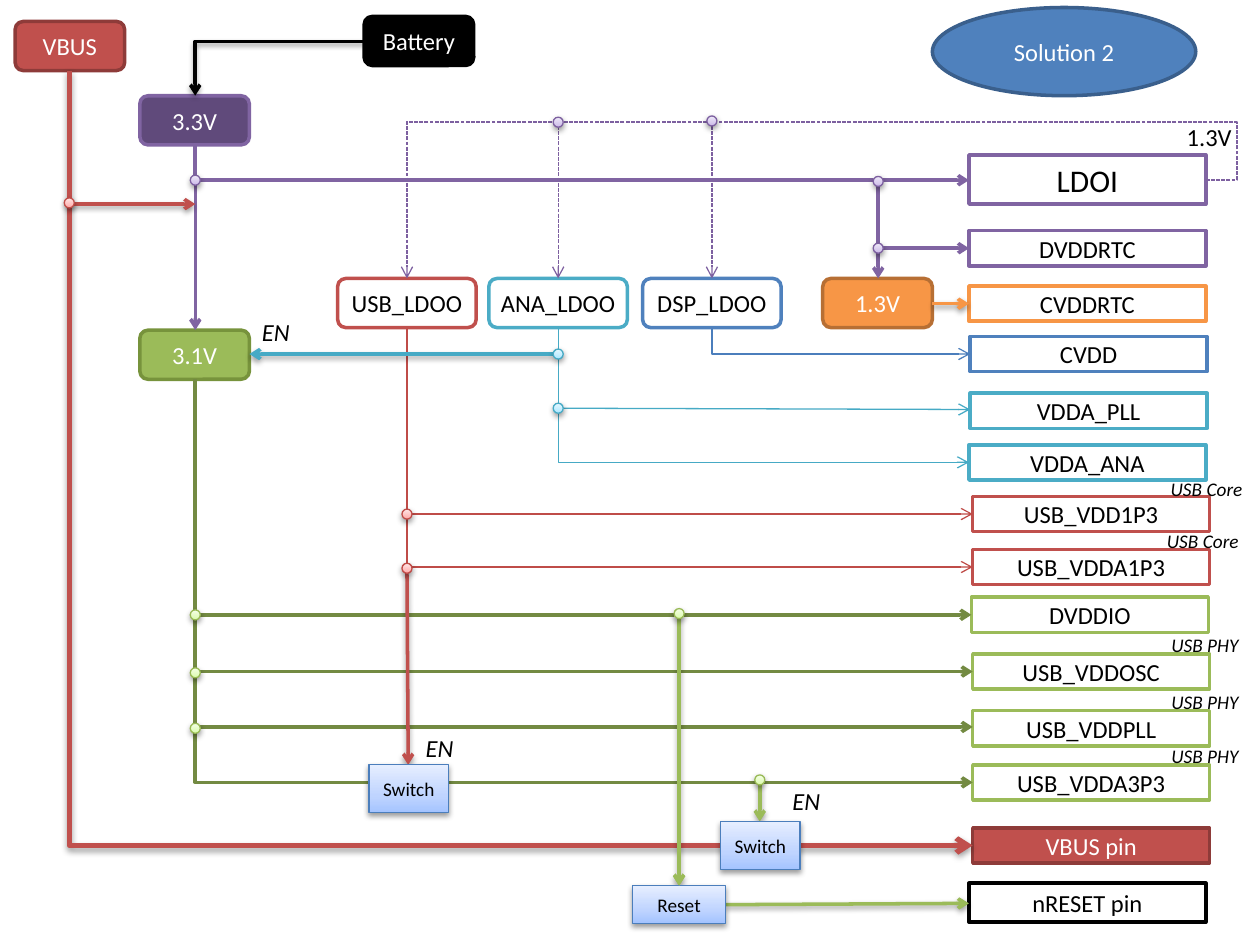
from copy import deepcopy
from typing import NamedTuple

from lxml import etree
from pptx import Presentation
from pptx import util as u
from pptx.dml.color import RGBColor
from pptx.enum import dml, shapes, text
from pptx.oxml.ns import qn

COLS, ROWS = 100, 75
HUES = {
    "white": "FFFFFF", "black": "000000",
    "red": "C0504D", "brick": "8E3B39", "rose": "BF4C48",
    "violet": "8064A2", "plum": "604A7B", "mauve": "7D60A0",
    "green": "9BBB59", "olive": "738A42", "moss": "77933C", "lime": "98B955",
    "orange": "F79646", "rust": "B76F34",
    "cyan": "4BACC6", "teal": "46AAC5",
    "blue": "4F81BD", "navy": "3A5F8C", "azure": "4B7EBC",
}
TINTS = {
    "mauve": ("C9B5E8", "D8CBEE", "F0EAF9"),
    "rose": ("FFA6A5", "FFC0BF", "FFE7E7"),
    "teal": ("A7E6FF", "C1EDFF", "E7F8FF"),
    "lime": ("DAFDA7", "E4FCC2", "F5FFE7"),
    "azure": ("A4C4FF", "BFD4FF", "E6EEFF"),
}
KIND = shapes.MSO_SHAPE

prs = Presentation()
prs.slide_width, prs.slide_height = u.Inches(10), u.Inches(7.5)
slide = prs.slides.add_slide(prs.slide_layouts[6])


class Box(NamedTuple):
    name: str
    x: float
    y: float
    w: float
    h: float
    line: str
    fill: str = "white"
    ink: str = "black"
    size: int = 14
    kind: int = KIND.RECTANGLE


class Wire(NamedTuple):
    x: float
    y: float
    x2: float
    y2: float
    hue: str
    width: float = 2
    bend: str = ""  # "down" or "side": the first leg of the elbow
    shade: bool = False
    dash: bool = False


def col(n: float) -> int:
    return round(prs.slide_width * n / COLS)


def row(n: float) -> int:
    return round(prs.slide_height * n / ROWS)


def rgb(name: str) -> RGBColor:
    return RGBColor.from_string(HUES.get(name, name))


def write(frame, words: str, *, size=14, ink="black", italic=False,
          align=text.PP_ALIGN.CENTER) -> None:
    par = frame.paragraphs[0]
    par.alignment = align
    run = par.add_run()
    run.text = words
    font = run.font
    font.name, font.size, font.italic = "Calibri", u.Pt(size), italic
    font.color.rgb = rgb(ink)


def shade(props) -> None:
    """Put a soft drop shadow into the effect list."""
    drop = etree.SubElement(props.find(qn("a:effectLst")), qn("a:outerShdw"),
                            blurRad="40000", dist="20000", dir="5400000", rotWithShape="0")
    hue = etree.SubElement(drop, qn("a:srgbClr"), val=HUES["black"])
    etree.SubElement(hue, qn("a:alpha"), val="38000")


def tint(shape, name: str) -> None:
    """Fill with a three-stop gradient that lightens upwards."""
    fill = shape.fill
    fill.gradient()
    fill.gradient_angle = 90
    stops = shape._element.spPr.find(".//" + qn("a:gsLst"))
    stops.insert(1, deepcopy(stops[0]))
    stops[1].set("pos", "35000")
    for stop, hue in zip(fill.gradient_stops, TINTS[name]):
        stop.color.rgb = rgb(hue)


def draw_box(box: Box) -> None:
    shape = slide.shapes.add_shape(box.kind, col(box.x), row(box.y), col(box.w), row(box.h))
    shape.shadow.inherit = False
    shape.line.color.rgb = rgb(box.line)
    if box.fill == "tint":
        tint(shape, box.line)
        shade(shape._element.spPr)
        shape.line.width = u.Pt(0.75)
    else:
        shape.fill.solid()
        shape.fill.fore_color.rgb = rgb(box.fill)
        shape.line.width = u.Pt(2)
    if box.name:
        frame = shape.text_frame
        frame.vertical_anchor = text.MSO_ANCHOR.MIDDLE
        if box.kind == KIND.ROUNDED_RECTANGLE:
            frame.margin_left = frame.margin_right = 0
            frame.margin_top = frame.margin_bottom = 0
        write(frame, box.name, size=box.size, ink=box.ink)


def draw_wire(wire: Wire, arrow: bool = True):
    kind = shapes.MSO_CONNECTOR.ELBOW if wire.bend else shapes.MSO_CONNECTOR.STRAIGHT
    link = slide.shapes.add_connector(kind, col(wire.x), row(wire.y), col(wire.x2), row(wire.y2))
    link.line.color.rgb, link.line.width = rgb(wire.hue), u.Pt(wire.width)
    if wire.dash:
        link.line.dash_style = dml.MSO_LINE.SQUARE_DOT
    props = link._element.spPr
    if arrow:
        etree.SubElement(props.find(qn("a:ln")), qn("a:tailEnd"), type="arrow")
    etree.SubElement(props, qn("a:effectLst"))
    if wire.shade:
        shade(props)
    if wire.bend in ("down", "side"):
        props.find(qn("a:prstGeom")).set("prst", "bentConnector2")
    if wire.bend == "down":
        wide, high = link.width, link.height
        link.left, link.top = link.left + (wide - high) // 2, link.top + (high - wide) // 2
        link.width, link.height = high, wide
        turn = props.find(qn("a:xfrm"))
        turn.set("rot", "16200000")
        turn.set("flipH", "1")
    return link


def draw_dot(x: float, y: float, hue: str) -> None:
    """Mark a junction centred on x, y."""
    draw_box(Box("", x - 0.4, y - 0.4, 0.8, 0.8, hue, "tint", kind=KIND.FLOWCHART_CONNECTOR))


def label(words: str, x: float, y: float, w: float, h: float, **form) -> None:
    frame = slide.shapes.add_textbox(col(x), row(y), col(w), row(h)).text_frame
    frame.word_wrap = False
    frame.auto_size = text.MSO_AUTO_SIZE.SHAPE_TO_FIT_TEXT
    write(frame, words, **form)


PINS = [
    ("DVDDRTC", 76.9, 18.3, "violet"), ("CVDDRTC", 76.9, 22.7, "orange"),
    ("CVDD", 77, 26.7, "blue"), ("VDDA_PLL", 77, 31.2, "cyan"),
    ("VDDA_ANA", 76.9, 35.3, "cyan"), ("USB_VDD1P3", 77.2, 39.4, "red"),
    ("USB_VDDA1P3", 77.2, 43.6, "red"), ("DVDDIO", 77.1, 47.4, "green"),
    ("USB_VDDOSC", 77.2, 51.9, "green"), ("USB_VDDPLL", 77.2, 56.4, "green"),
    ("USB_VDDA3P3", 77.2, 60.7, "green"),
]
RAILS = [
    ("3.3V", 11.1, 7.6, 8.7, "violet", "plum", "white"),
    ("1.3V", 65.3, 22.1, 8.7, "rust", "orange", "white"),
    ("3.1V", 11.1, 26.2, 8.7, "moss", "green", "white"),
    ("VBUS", 1.2, 1.7, 8.7, "brick", "red", "white"),
    ("Battery", 28.9, 1.3, 8.7, "black", "black", "white"),
    ("USB_LDOO", 26.8, 22.1, 11, "red", "white", "black"),
    ("ANA_LDOO", 38.8, 22.1, 11, "cyan", "white", "black"),
    ("DSP_LDOO", 51, 22.1, 11, "blue", "white", "black"),
]
BOXES = [Box(name, x, y, 18.8, 2.8, line) for name, x, y, line in PINS]
BOXES += [Box(name, x, y, w, 3.9, line, fill, ink, kind=KIND.ROUNDED_RECTANGLE)
          for name, x, y, w, line, fill, ink in RAILS]
BOXES += [
    Box("LDOI", 76.9, 12.3, 18.8, 3.9, "violet", size=18),
    Box("VBUS pin", 77.2, 65.7, 18.8, 2.8, "brick", "red", "white"),
    Box("nRESET pin", 76.9, 70.1, 18.8, 3.1, "black"),
    Box("Solution 2", 74, 0.6, 20.9, 7, "navy", "blue", "white", kind=KIND.OVAL),
]
WIRES = [Wire(15.5, 30.1, x, y, "olive", bend="down")
         for x, y in ((77.1, 48.8), (77.2, 53.3), (77.2, 57.7), (77.2, 62.1))]
WIRES += [Wire(x, y, x, 22.1, "mauve", 0.75, dash=True)
          for x, y in ((32.3, 9.6), (44.3, 10), (56.5, 10))]
WIRES += [
    Wire(15.5, 11.5, 76.9, 14.3, "violet", bend="down"),
    Wire(15.5, 11.5, 15.5, 26.2, "violet"),
    Wire(69.7, 14.3, 69.7, 22.1, "violet"),
    Wire(69.7, 14.8, 76.9, 19.7, "violet", bend="down"),
    Wire(56.5, 26.1, 77, 28.1, "azure", 0.75, "down"),
    Wire(44.3, 26.1, 76.9, 36.7, "teal", 0.75, "down"),
    Wire(44.3, 32.4, 77, 32.5, "teal", 0.75),
    Wire(32.3, 26.1, 77.2, 45, "rose", 0.75, "down"),
    Wire(32.3, 26.1, 77.2, 40.8, "rose", 0.75, "down"),
    Wire(74, 24.1, 76.9, 24.1, "orange", shade=True),
    Wire(43.9, 28.1, 19.8, 28.1, "teal", shade=True),
    Wire(5.5, 5.6, 77.2, 67.1, "red", 3, "down", True),
    Wire(5.5, 16.2, 15.5, 16.2, "red", shade=True),
    Wire(28.9, 3.3, 15.5, 7.6, "black", bend="side", shade=True),
    Wire(53.9, 48.8, 53.9, 70.3, "green", shade=True),
    Wire(57.6, 71.8, 76.9, 71.7, "green", shade=True),
    Wire(60.3, 62.1, 60.3, 65.2, "green", shade=True),
    Wire(32.3, 45.4, 32.4, 60.7, "red", shade=True),
]
GATES = [("Switch", 57.2, 65.2, 6.3, 3.8), ("Switch", 29.3, 60.7, 6.3, 3.8),
         ("Reset", 50.2, 70.3, 7.4, 3)]
DOTS = {
    "mauve": [(44.3, 9.7), (56.5, 9.6), (15.5, 14.3), (69.7, 14.4), (69.7, 19.7)],
    "rose": [(32.3, 40.8), (32.3, 45.1), (5.5, 16.1)],
    "teal": [(44.3, 32.4), (44.3, 28.1)],
    "lime": [(15.5, 48.8), (15.5, 53.4), (15.5, 57.8), (53.9, 48.7), (60.3, 61.9)],
}
NOTES = [("USB PHY", 91.9, 58.6, 7.4), ("USB PHY", 91.9, 54.3, 7.4),
         ("USB PHY", 91.9, 49.8, 7.4), ("USB Core", 91.5, 41.5, 7.8),
         ("USB Core", 91.8, 37.4, 7.8)]

for box in BOXES:
    draw_box(box)
loop = draw_wire(Wire(95.7, 14.3, 32.3, 9.7, "mauve", 0.75, "loop", dash=True), arrow=False)
loop.line.fill.solid()
loop.line.color.rgb = rgb("mauve")
geom = loop._element.spPr.find(qn("a:prstGeom"))
guides = geom.find(qn("a:avLst"))
etree.SubElement(guides, qn("a:gd"), name="adj1", fmla="val -3900")
for wire in WIRES:
    draw_wire(wire)
for gate in GATES:
    draw_box(Box(*gate, "azure", "tint", size=11))
draw_wire(Wire(53.9, 66, 53.9, 70.3, "green"))
for hue, spots in DOTS.items():
    for spot in spots:
        draw_dot(*spot, hue)
for words, x, y, w in NOTES:
    label(words, x, y, w, 2.9, size=11, italic=True, align=text.PP_ALIGN.RIGHT)
for x, y in ((19.8, 24.7), (61.9, 61.9), (32.8, 57.7)):
    label("EN", x, y, 4.2, 3.4, italic=True, align=text.PP_ALIGN.LEFT)
label("1.3V", 93.2, 9.2, 5.6, 3.4, align=text.PP_ALIGN.LEFT)

prs.save("out.pptx")
